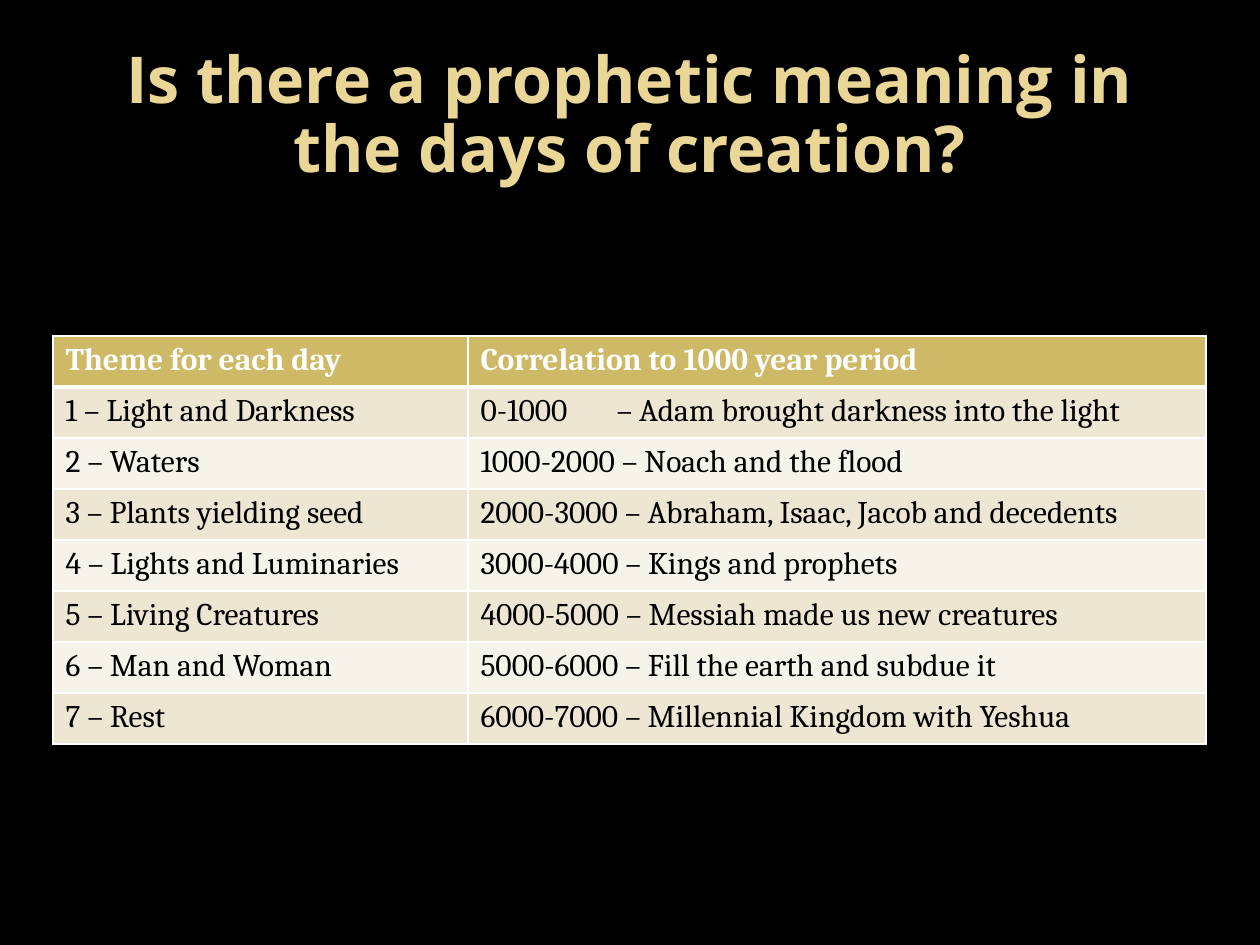
"""Build a slide with a table linking the days of creation to 1000 year periods."""
import pptx
import pptx.dml.color
import pptx.enum.text
import pptx.oxml.ns
import pptx.util
from lxml import etree

PX = 914400 / 126
BODY_FONT = "Cambria"
HEADER_FILL = "CEB966"
BAND_FILLS = ("F6F3EA", "EDE6D3")
ROWS = [
    ("Theme for each day", "Correlation to 1000 year period"),
    ("1 – Light and Darkness", "0-1000\t– Adam brought darkness into the light"),
    ("2 – Waters", "1000-2000 – Noach and the flood"),
    ("3 – Plants yielding seed", "2000-3000 – Abraham, Isaac, Jacob and decedents"),
    ("4 – Lights and Luminaries", "3000-4000 – Kings and prophets"),
    ("5 – Living Creatures", "4000-5000 – Messiah made us new creatures"),
    ("6 – Man and Woman", "5000-6000 – Fill the earth and subdue it"),
    ("7 – Rest", "6000-7000 – Millennial Kingdom with Yeshua"),
]


def px(length):
    return pptx.util.Emu(round(length * PX))


def color(value):
    return pptx.dml.color.RGBColor.from_string(value)


presentation = pptx.Presentation()
presentation.slide_width, presentation.slide_height = px(1260), px(945)
slide = presentation.slides.add_slide(presentation.slide_layouts[5])
slide.background.fill.solid()
slide.background.fill.fore_color.rgb = color("000000")

title = slide.shapes.title
title.left, title.top, title.width, title.height = px(63), px(38), px(1134), px(158)
title.text_frame.word_wrap = True
title.text_frame.auto_size = pptx.enum.text.MSO_AUTO_SIZE.NONE
title.text_frame.vertical_anchor = pptx.enum.text.MSO_ANCHOR.MIDDLE
paragraph = title.text_frame.paragraphs[0]
paragraph.alignment = pptx.enum.text.PP_ALIGN.CENTER
paragraph.line_spacing = 0.9
run = paragraph.add_run()
run.text = "Is there a prophetic meaning in the days of creation?"
run.font.name = "Open Sans"
run.font.size = pptx.util.Pt(36.9)
run.font.bold = True
run.font.color.rgb = color("EAD696")

table = slide.shapes.add_table(len(ROWS), 2, px(53), px(336), px(1153), px(408)).table
for column, width in zip(table.columns, (415, 738)):
    column.width = px(width)

for row_index, texts in enumerate(ROWS):
    table.rows[row_index].height = px(51)
    is_header = row_index == 0
    for column_index, text in enumerate(texts):
        cell = table.cell(row_index, column_index)
        properties = cell._tc.get_or_add_tcPr()
        for side in ("lnL", "lnR", "lnT", "lnB"):
            under_header = (row_index, side) in ((0, "lnB"), (1, "lnT"))
            line = etree.SubElement(properties, pptx.oxml.ns.qn(f"a:{side}"))
            line.set("w", str(pptx.util.Pt(3 if under_header else 1)))
            line_fill = etree.SubElement(line, pptx.oxml.ns.qn("a:solidFill"))
            etree.SubElement(line_fill, pptx.oxml.ns.qn("a:srgbClr")).set("val", "FFFFFF")
        cell.fill.solid()
        cell.fill.fore_color.rgb = color(HEADER_FILL if is_header else BAND_FILLS[row_index % 2])

        paragraph = cell.text_frame.paragraphs[0]
        if "\t" in text:
            tab_list = etree.SubElement(paragraph._p.get_or_add_pPr(), pptx.oxml.ns.qn("a:tabLst"))
            tab = etree.SubElement(tab_list, pptx.oxml.ns.qn("a:tab"))
            tab.set("pos", str(px(136)))
            tab.set("algn", "l")
        run = paragraph.add_run()
        run.text = text
        run.font.name = BODY_FONT
        run.font.size = pptx.util.Pt(18)
        run.font.bold = is_header
        run.font.color.rgb = color("FFFFFF" if is_header else "000000")

presentation.save("out.pptx")
